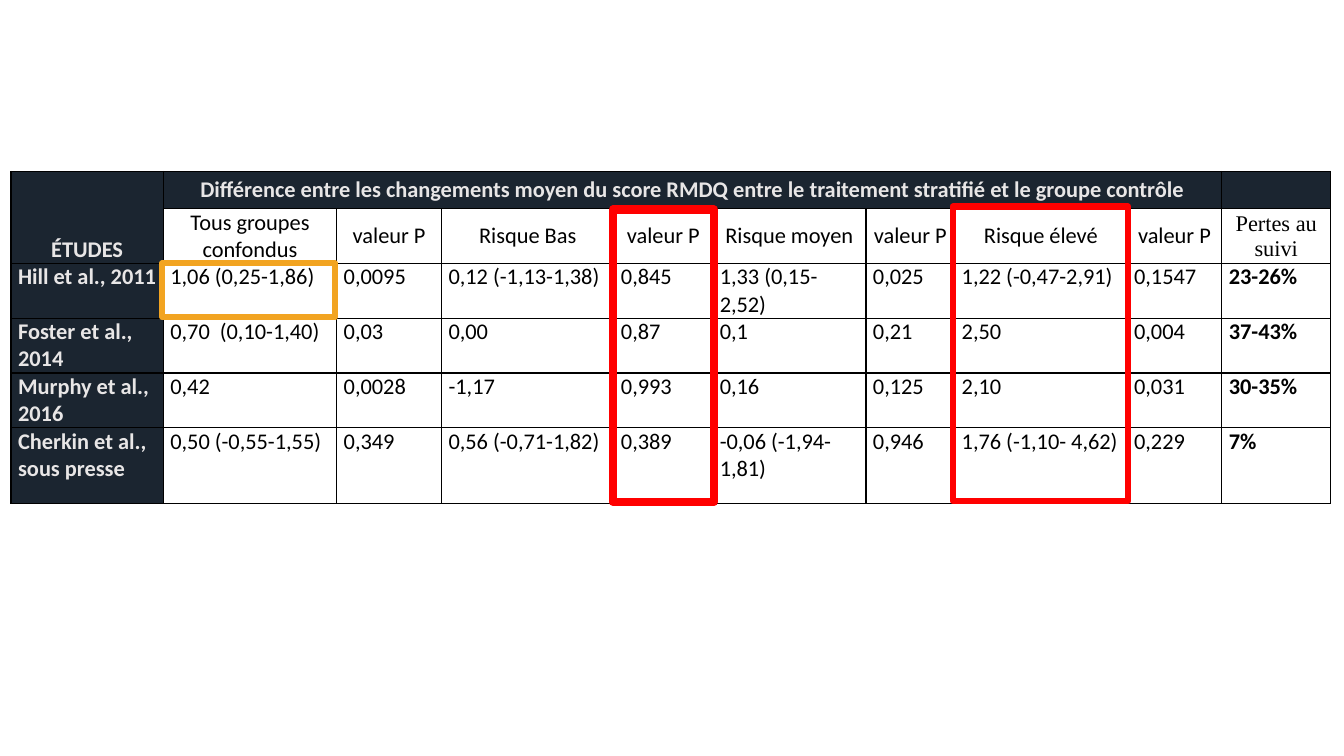
from lxml.etree import SubElement
from pptx import Presentation
from pptx.dml.color import RGBColor
from pptx.enum.shapes import MSO_SHAPE
from pptx.enum.text import MSO_ANCHOR, PP_ALIGN
from pptx.oxml.ns import qn
from pptx.util import Inches, Pt

NAVY = RGBColor(0x1B, 0x25, 0x30)
PALE = RGBColor(0xE8, 0xE6, 0xE6)
BLACK = RGBColor(0x00, 0x00, 0x00)
WHITE = RGBColor(0xFF, 0xFF, 0xFF)
RED = RGBColor(0xFF, 0x00, 0x00)
ORANGE = RGBColor(0xF2, 0xA4, 0x21)

COLUMN_WIDTHS = [1.51, 1.72, 1.04, 1.71, 0.98, 1.52, 0.88, 1.71, 0.94, 1.08]
ROW_HEIGHTS = [0.37, 0.54, 0.54, 0.54, 0.54, 0.75]
TITLE = "Différence entre les changements moyen du score RMDQ entre le traitement stratifié et le groupe contrôle"
ROWS = [
    ["ÉTUDES", TITLE] + [""] * 8,
    ["", "Tous groupes confondus", "valeur P", "Risque Bas", "valeur P",
     "Risque moyen", "valeur P", "Risque élevé", "valeur P", "Pertes au suivi"],
    ["Hill et al., 2011", "1,06 (0,25-1,86)", "0,0095", "0,12 (-1,13-1,38)", "0,845",
     "1,33 (0,15-2,52)", "0,025", "1,22 (-0,47-2,91)", "0,1547", "23-26%"],
    ["Foster et al., 2014", "0,70  (0,10-1,40)", "0,03", "0,00", "0,87",
     "0,1", "0,21", "2,50", "0,004", "37-43%"],
    ["Murphy et al., 2016", "0,42", "0,0028", "-1,17", "0,993",
     "0,16", "0,125", "2,10", "0,031", "30-35%"],
    ["Cherkin et al., sous presse", "0,50 (-0,55-1,55)", "0,349", "0,56 (-0,71-1,82)", "0,389",
     "-0,06 (-1,94- 1,81)", "0,946", "1,76 (-1,10- 4,62)", "0,229", "7%"],
]
MERGES = [((0, 0), (1, 0)), ((0, 1), (0, 8))]
HIGHLIGHTS = [
    ((9.45, 2.05, 1.74, 2.92), RED, 4.5),
    ((6.08, 2.08, 1, 2.9), RED, 6),
    ((1.61, 2.61, 1.71, 0.54), ORANGE, 4.25),
]


class StudySlide:
    font_name = "Calibri"
    note_font_name = "Times New Roman"
    font_size = Pt(16)
    cell_margins = {
        "margin_left": Inches(0.07),
        "margin_right": Inches(0.07),
        "margin_top": 0,
        "margin_bottom": 0,
    }

    def __init__(self, presentation):
        self.slide = presentation.slides.add_slide(presentation.slide_layouts[6])

    def add_borders(self, cell):
        properties = cell._tc.get_or_add_tcPr()
        for position, side in enumerate(("lnL", "lnR", "lnT", "lnB")):
            line = properties.makeelement(qn(f"a:{side}"), {"w": str(Pt(1))})
            properties.insert(position, line)
            fill = SubElement(line, qn("a:solidFill"))
            SubElement(fill, qn("a:srgbClr"), val=str(BLACK))

    def format_cell(self, cell, text, row, column):
        is_dark = row == 0 or column == 0
        is_heading = row < 2
        is_last = column == len(COLUMN_WIDTHS) - 1
        anchor = MSO_ANCHOR.MIDDLE if is_heading else MSO_ANCHOR.TOP
        if text == "ÉTUDES":
            anchor = MSO_ANCHOR.BOTTOM
        cell.fill.solid()
        cell.fill.fore_color.rgb = NAVY if is_dark else WHITE
        for name, value in {**self.cell_margins, "vertical_anchor": anchor}.items():
            setattr(cell, name, value)
        self.add_borders(cell)
        if not text:
            return
        paragraph = cell.text_frame.paragraphs[0]
        paragraph.alignment = PP_ALIGN.CENTER if is_heading else PP_ALIGN.LEFT
        run = paragraph.add_run()
        run.text = text
        font_values = {
            "name": self.note_font_name if is_heading and is_last else self.font_name,
            "size": self.font_size,
            "bold": is_dark or (is_last and not is_heading),
        }
        for name, value in font_values.items():
            setattr(run.font, name, value)
        run.font.color.rgb = PALE if is_dark else BLACK

    def add_table(self, left, top):
        shape = self.slide.shapes.add_table(
            len(ROW_HEIGHTS), len(COLUMN_WIDTHS), Inches(left), Inches(top),
            Inches(sum(COLUMN_WIDTHS)), Inches(sum(ROW_HEIGHTS)))
        table = shape.table
        table.first_row = False
        table.horz_banding = False
        for column, width in zip(table.columns, COLUMN_WIDTHS):
            column.width = Inches(width)
        for row, height in zip(table.rows, ROW_HEIGHTS):
            row.height = Inches(height)
        for row, texts in enumerate(ROWS):
            for column, text in enumerate(texts):
                self.format_cell(table.cell(row, column), text, row, column)
        for first, last in MERGES:
            table.cell(*first).merge(table.cell(*last))

    def add_highlight(self, box, color, width):
        shape = self.slide.shapes.add_shape(
            MSO_SHAPE.RECTANGLE, *[Inches(length) for length in box])
        shape.shadow.inherit = False
        shape.fill.background()
        shape.line.color.rgb = color
        shape.line.width = Pt(width)


def main():
    presentation = Presentation()
    presentation.slide_width = Inches(13.33)
    presentation.slide_height = Inches(7.5)
    study_slide = StudySlide(presentation)
    study_slide.add_table(0.11, 1.7)
    for box, color, width in HIGHLIGHTS:
        study_slide.add_highlight(box, color, width)
    presentation.save("out.pptx")


if __name__ == "__main__":
    main()
